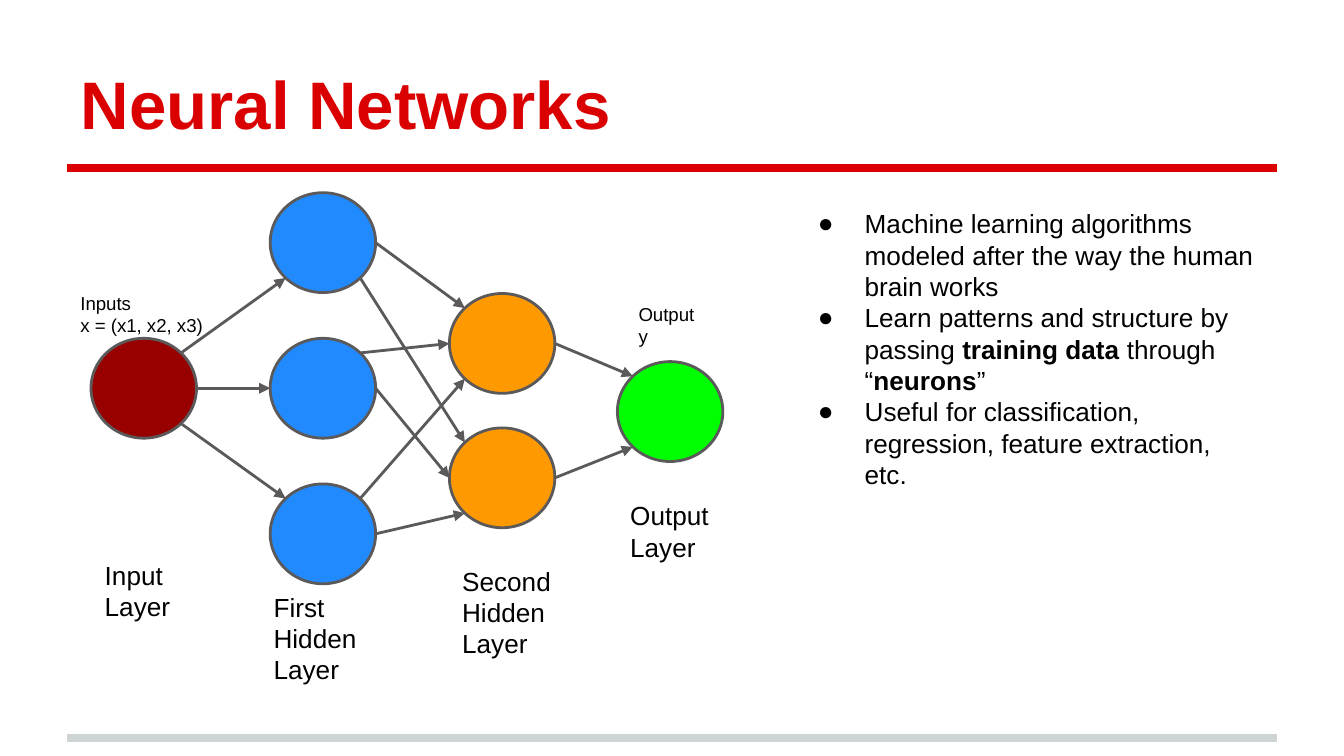
from math import sqrt

from lxml import etree
from pptx import Presentation
from pptx.dml.color import RGBColor
from pptx.enum import shapes, text
from pptx.oxml import ns
from pptx.util import Pt

RED = RGBColor(0xDA, 0x00, 0x02)
SILVER = RGBColor(0xCF, 0xD4, 0xD4)
GRAY = RGBColor(0x5B, 0x59, 0x5A)
MAROON = RGBColor(0x98, 0x00, 0x00)
BLUE = RGBColor(0x22, 0x8A, 0xFF)
ORANGE = RGBColor(0xFF, 0x99, 0x00)
GREEN = RGBColor(0x00, 0xFF, 0x00)
BLACK = RGBColor(0x00, 0x00, 0x00)

NODE_W, NODE_H = 56.5, 53.5

# Centre x, centre ys and colour of each layer, relative to the diagram box
LAYERS = {
    "input": (41, [104], MAROON),
    "first": (137, [26, 104, 182], BLUE),
    "second": (233, [80, 152], ORANGE),
    "output": (323, [116.5], GREEN),
}
# Points on a node's outline, in half-widths and half-heights from its centre
D = 1 / sqrt(2)
SITES = {"right": (1, 0), "left": (-1, 0), "top right": (D, -D),
         "bottom right": (D, D), "top left": (-D, -D), "bottom left": (-D, D)}
LINKS = [
    ("input", 0, "bottom right", "first", 2, "top left"),
    ("input", 0, "top right", "first", 0, "bottom left"),
    ("input", 0, "right", "first", 1, "left"),
    ("first", 0, "right", "second", 0, "top left"),
    ("first", 0, "bottom right", "second", 1, "top left"),
    ("first", 1, "top right", "second", 0, "left"),
    ("first", 1, "right", "second", 1, "left"),
    ("first", 2, "top right", "second", 0, "bottom left"),
    ("first", 2, "right", "second", 1, "bottom left"),
    ("second", 0, "right", "output", 0, "top left"),
    ("second", 1, "right", "output", 0, "bottom left"),
]
# Text, size and left, top, width, height relative to the diagram box
LABELS = [
    (["Input Layer"], 14, (13, 188.5, 79, 32)),
    (["First Hidden Layer"], 14, (103.5, 205.5, 67, 22)),
    (["Second Hidden Layer"], 14, (204.5, 191.5, 67, 36)),
    (["Output", "Layer"], 14, (294.5, 156.5, 60, 36)),
    (["Inputs", "x = (x1, x2, x3)"], 10, (0, 45, 86, 32)),
    (["Output y"], 10, (299, 51, 47.5, 17)),
]
# Each point is a list of runs; every second run is bold
POINTS = [
    ["Machine learning algorithms modeled after the way the human brain works"],
    ["Learn patterns and structure by passing ", "training data",
     " through “", "neurons", "”"],
    ["Useful for classification, regression, feature extraction, etc."],
]


def place(shape, left, top, width, height):
    shape.left, shape.top = Pt(left), Pt(top)
    shape.width, shape.height = Pt(width), Pt(height)


def write(shape, paragraphs, size=14, color=BLACK, bold=False, bullet=None,
          anchor=text.MSO_ANCHOR.TOP):
    """Fill a shape with paragraphs, each a list of runs, plain and bold in turn."""
    frame = shape.text_frame
    frame.word_wrap = True
    frame.auto_size = text.MSO_AUTO_SIZE.NONE
    frame.vertical_anchor = anchor
    frame.margin_left = frame.margin_right = Pt(7.2)
    frame.margin_top = frame.margin_bottom = Pt(7.2)
    for i, runs in enumerate(paragraphs):
        paragraph = frame.paragraphs[0] if i == 0 else frame.add_paragraph()
        paragraph.alignment = text.PP_ALIGN.LEFT
        paragraph.space_before = paragraph.space_after = Pt(0)
        for j, words in enumerate(runs):
            run = paragraph.add_run()
            run.text = words
            run.font.name, run.font.size = "Arial", Pt(size)
            run.font.bold = bold or j % 2 == 1
            run.font.color.rgb = color
        if bullet:
            props = paragraph._p.get_or_add_pPr()
            props.set("marL", str(Pt(36)))
            props.set("indent", str(Pt(-25)))
            etree.SubElement(props, ns.qn("a:buFont"), typeface="Arial")
            etree.SubElement(props, ns.qn("a:buChar"), char=bullet)


def add_line(slide, start, end, color, width, arrow=False):
    line = slide.shapes.add_connector(
        shapes.MSO_CONNECTOR.STRAIGHT, *map(Pt, (*start, *end)))
    line.line.color.rgb = color
    line.line.width = Pt(width)
    if arrow:
        etree.SubElement(line.line._get_or_add_ln(), ns.qn("a:tailEnd"),
                         type="triangle", w="med", len="med")
    etree.SubElement(line._element.spPr, ns.qn("a:effectLst"))


def add_header(slide, left, top, width, height):
    title = slide.shapes.title
    place(title, left, top, width, height)
    write(title, [["Neural Networks"]], size=36, color=RED, bold=True,
          anchor=text.MSO_ANCHOR.BOTTOM)


def add_rules(slide, left, width):
    for y, color in ((395.5, SILVER), (90, RED)):
        add_line(slide, (left, y), (left + width, y), color, 4)


def add_network(slide, left, top):
    # Nodes
    for x, ys, color in LAYERS.values():
        for y in ys:
            node = slide.shapes.add_shape(
                shapes.MSO_SHAPE.OVAL, Pt(left + x - NODE_W / 2),
                Pt(top + y - NODE_H / 2), Pt(NODE_W), Pt(NODE_H))
            node.shadow.inherit = False
            node.fill.solid()
            node.fill.fore_color.rgb = color
            node.line.color.rgb = GRAY
            node.line.width = Pt(1.5)

    # Labels
    for lines, size, (x, y, width, height) in LABELS:
        label = slide.shapes.add_textbox(
            Pt(left + x), Pt(top + y), Pt(width), Pt(height))
        write(label, [[line] for line in lines], size=size)

    # Arrows between the layers
    def site(layer, index, side):
        x, ys, _ = LAYERS[layer]
        dx, dy = SITES[side]
        return (left + x + dx * NODE_W / 2, top + ys[index] + dy * NODE_H / 2)

    for link in LINKS:
        add_line(slide, site(*link[:3]), site(*link[3:]), GRAY, 1.5, arrow=True)


def add_points(slide, left, top, width, height):
    points = slide.placeholders[1]
    place(points, left, top, width, height)
    write(points, POINTS, bullet="●")


def main():
    deck = Presentation()
    deck.slide_width, deck.slide_height = Pt(720), Pt(405)
    slide = deck.slides.add_slide(deck.slide_layouts[1])
    add_rules(slide, 36, 648)
    add_header(slide, 36, 16.5, 648, 67.5)
    add_network(slide, 36, 104)
    add_points(slide, 420, 104, 261, 284)
    deck.save("out.pptx")


if __name__ == "__main__":
    main()
